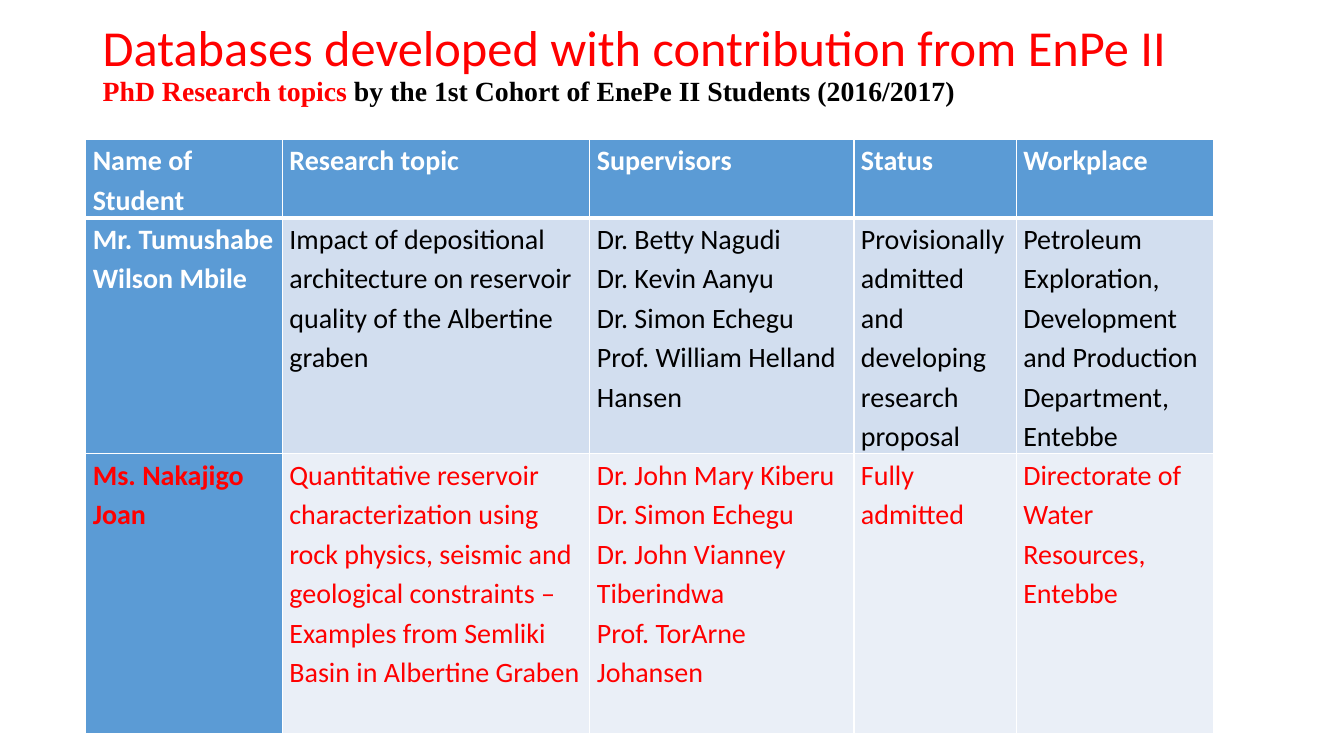
from pptx import Presentation
from pptx.dml.color import RGBColor as RGB
from pptx.enum.text import MSO_ANCHOR as Anchor
from pptx.oxml import parse_xml
from pptx.oxml.ns import nsdecls
from pptx.util import Inches, Pt

COLORS = {
    "white": "FFFFFF", "black": "000000", "red": "FF0000",
    "blue": "5B9BD5", "band": "D2DEEF", "pale": "EAEFF7",
}

HEADLINE = [
    ("Calibri", 36, [("Databases developed with contribution from EnPe II", "red", False)]),
    ("Times New Roman", 19.8, [
        ("PhD Research topics ", "red", True),
        ("by the 1st Cohort of EnePe II Students (2016/2017)", "black", True),
    ]),
]

COLUMN_SHARES = [14.63, 22.88, 19.65, 12.08, 14.7]
ROW_SHARES = [10.4, 31.2, 37.07]

STUDENTS = [
    ["Name of Student", "Research topic", "Supervisors", "Status", "Workplace"],
    [
        "Mr. Tumushabe Wilson Mbile",
        "Impact of depositional architecture on reservoir quality of the Albertine graben",
        "Dr. Betty Nagudi\nDr. Kevin Aanyu\nDr. Simon Echegu\nProf. William Helland Hansen",
        "Provisionally admitted and developing research proposal",
        "Petroleum Exploration, Development and Production\nDepartment, Entebbe",
    ],
    [
        "Ms. Nakajigo Joan",
        "Quantitative reservoir characterization using rock physics, seismic and "
        "geological constraints – Examples from Semliki Basin in Albertine Graben",
        "Dr. John Mary Kiberu\nDr. Simon Echegu\nDr. John Vianney Tiberindwa\n"
        "Prof. TorArne Johansen",
        "Fully admitted",
        "Directorate of Water Resources, Entebbe",
    ],
]

ROW_STYLES = [
    {"fill": "blue", "name": "white", "text": "white"},
    {"fill": "band", "name": "white", "text": "black"},
    {"fill": "pale", "name": "red", "text": "red"},
]


class Deck:
    def __init__(self, width, height):
        self.prs = Presentation()
        self.prs.slide_width = Inches(width)
        self.prs.slide_height = Inches(height)
        self.slide = self.prs.slides.add_slide(self.prs.slide_layouts[6])

    def x(self, share):
        return round(self.prs.slide_width * share / 100)

    def y(self, share):
        return round(self.prs.slide_height * share / 100)

    def color(self, name):
        return RGB.from_string(COLORS[name])

    def headline(self, left, top, width, height, lines):
        frame = self.slide.shapes.add_textbox(
            self.x(left), self.y(top), self.x(width), self.y(height)).text_frame
        frame.word_wrap = True
        frame.vertical_anchor = Anchor.BOTTOM
        frame.margin_bottom = Inches(0.2)
        for index, (font, size, parts) in enumerate(lines):
            line = frame.add_paragraph() if index else frame.paragraphs[0]
            line.line_spacing = 0.9
            line.font.name, line.font.size = font, Pt(size)
            for words, color, bold in parts:
                run = line.add_run()
                run.text = words
                run.font.bold = bold
                run.font.color.rgb = self.color(color)

    def borders(self, cell, top, bottom):
        for side, points in (("L", 1), ("R", 1), ("T", top), ("B", bottom)):
            cell._tc.get_or_add_tcPr().append(parse_xml(
                f'<a:ln{side} {nsdecls("a")} w="{Pt(points)}"><a:solidFill>'
                f'<a:srgbClr val="{COLORS["white"]}"/></a:solidFill></a:ln{side}>'))

    def cell(self, cell, words, fill, color, bold):
        cell.margin_left = cell.margin_right = Inches(0.07)
        cell.margin_top = cell.margin_bottom = 0
        cell.fill.solid()
        cell.fill.fore_color.rgb = self.color(fill)
        cell.text = words
        for line in cell.text_frame.paragraphs:
            line.line_spacing = 1.15
            line.font.name, line.font.size = "Calibri", Pt(20)
            line.font.bold = bold
            line.font.color.rgb = self.color(color)

    def table(self, left, top, columns, rows, entries, styles):
        table = self.slide.shapes.add_table(
            len(rows), len(columns), self.x(left), self.y(top),
            self.x(sum(columns)), self.y(sum(rows))).table
        table.first_col = True
        for column, share in zip(table.columns, columns):
            column.width = self.x(share)
        for r, (share, entry, style) in enumerate(zip(rows, entries, styles)):
            table.rows[r].height = self.y(share)
            for c, words in enumerate(entry):
                cell = table.cell(r, c)
                self.borders(cell, 3 if r == 1 else 1, 3 if r == 0 else 1)
                self.cell(cell, words,
                          "blue" if c == 0 else style["fill"],
                          style["name" if c == 0 else "text"],
                          r == 0 or c == 0)


def main():
    deck = Deck(13.33, 7.5)
    deck.headline(6.9, -3.07, 86.27, 20, HEADLINE)
    deck.table(6.38, 18.4, COLUMN_SHARES, ROW_SHARES, STUDENTS, ROW_STYLES)
    deck.prs.save("out.pptx")


if __name__ == "__main__":
    main()
